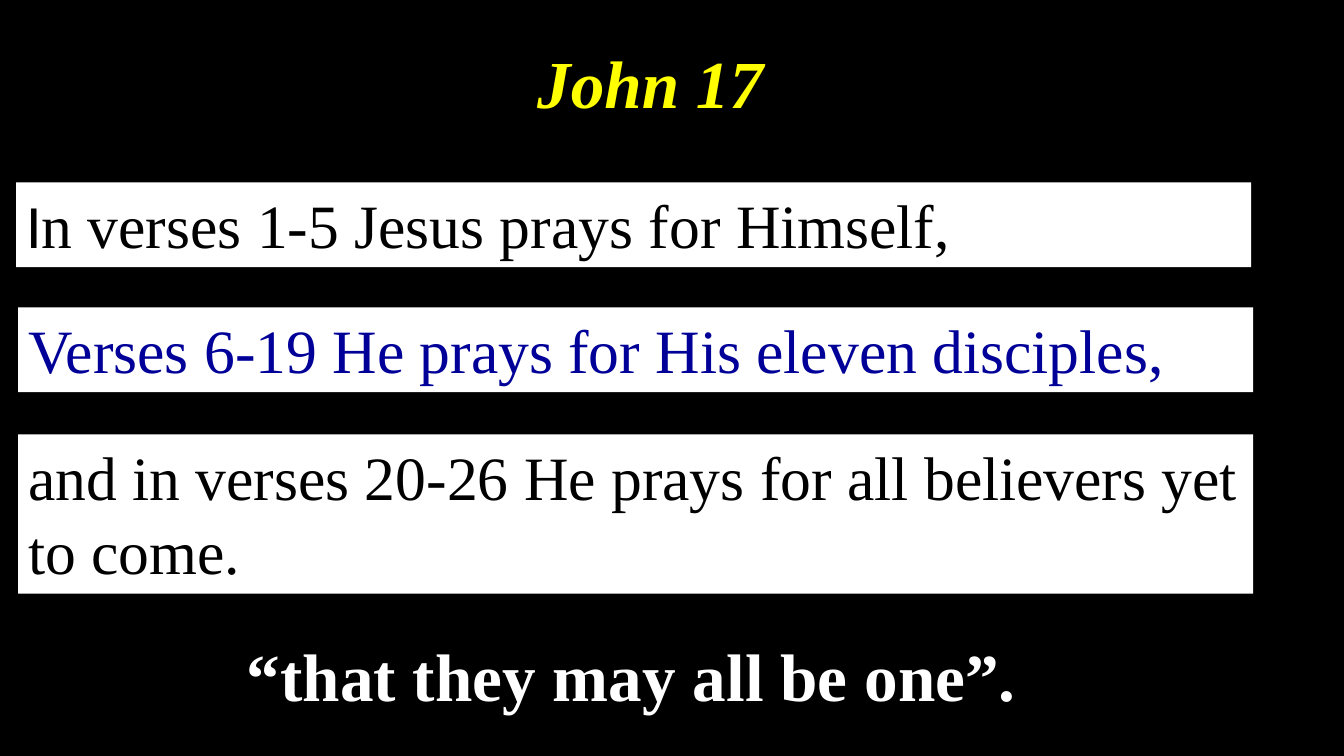
from pptx import Presentation
from pptx import util as u
from pptx.dml.color import RGBColor
from pptx.enum import shapes, text

COLOURS = {"black": "000000", "white": "FFFFFF", "blue": "000099", "yellow": "FFFF00"}
SERIF, SANS = "Times New Roman", "Calibri"
PANEL_WIDTH = 12.25

# Left, top, height, text colour, (text, font) runs
PANELS = [
    (0.16, 1.81, 0.84, "black", [("I", SANS), ("n verses 1-5 Jesus prays for Himself,", SERIF)]),
    (0.18, 3.05, 0.84, "blue", [("Verses 6-19 He prays for His eleven disciples,", SERIF)]),
    (0.18, 4.31, 1.58, "black",
     [("and in verses 20-26 He prays for all believers yet to come.", SERIF)]),
]
# Left, top, width, height, text, format
HEADLINES = [
    (5.23, 0.36, 2.47, 0.91, "John 17", dict(colour="yellow", italic=True)),
    (2.35, 6.24, 7.91, 0.91, "“that they may all be one”.", dict(colour="white")),
]


def rgb(name):
    return RGBColor.from_string(COLOURS[name])


def write(shape, runs, size, colour, bold=False, italic=False, wrap=True):
    frame = shape.text_frame
    frame.word_wrap = wrap
    frame.auto_size = text.MSO_AUTO_SIZE.SHAPE_TO_FIT_TEXT
    frame.vertical_anchor = text.MSO_ANCHOR.TOP
    paragraph = frame.paragraphs[0]
    paragraph.alignment = text.PP_ALIGN.LEFT
    for words, font_name in runs:
        run = paragraph.add_run()
        run.text = words
        run.font.name = font_name
        run.font.size = u.Pt(size)
        run.font.bold = bold
        run.font.italic = italic
        run.font.color.rgb = rgb(colour)


def add_panel(slide, left, top, height, colour, runs):
    panel = slide.shapes.add_shape(
        shapes.MSO_SHAPE.RECTANGLE, *map(u.Inches, (left, top, PANEL_WIDTH, height)))
    panel.shadow.inherit = False
    panel.fill.solid()
    panel.fill.fore_color.rgb = rgb("white")
    panel.line.fill.background()
    write(panel, runs, size=44, colour=colour)


def main():
    presentation = Presentation()
    presentation.slide_width = u.Inches(13.33)
    presentation.slide_height = u.Inches(7.5)
    slide = presentation.slides.add_slide(presentation.slide_layouts[6])
    slide.background.fill.solid()
    slide.background.fill.fore_color.rgb = rgb("black")

    for panel in PANELS:
        add_panel(slide, *panel)
    for *box, words, style in HEADLINES:
        headline = slide.shapes.add_textbox(*map(u.Inches, box))
        write(headline, [(words, SERIF)], size=48, bold=True, wrap=False, **style)

    presentation.save("out.pptx")


if __name__ == "__main__":
    main()
